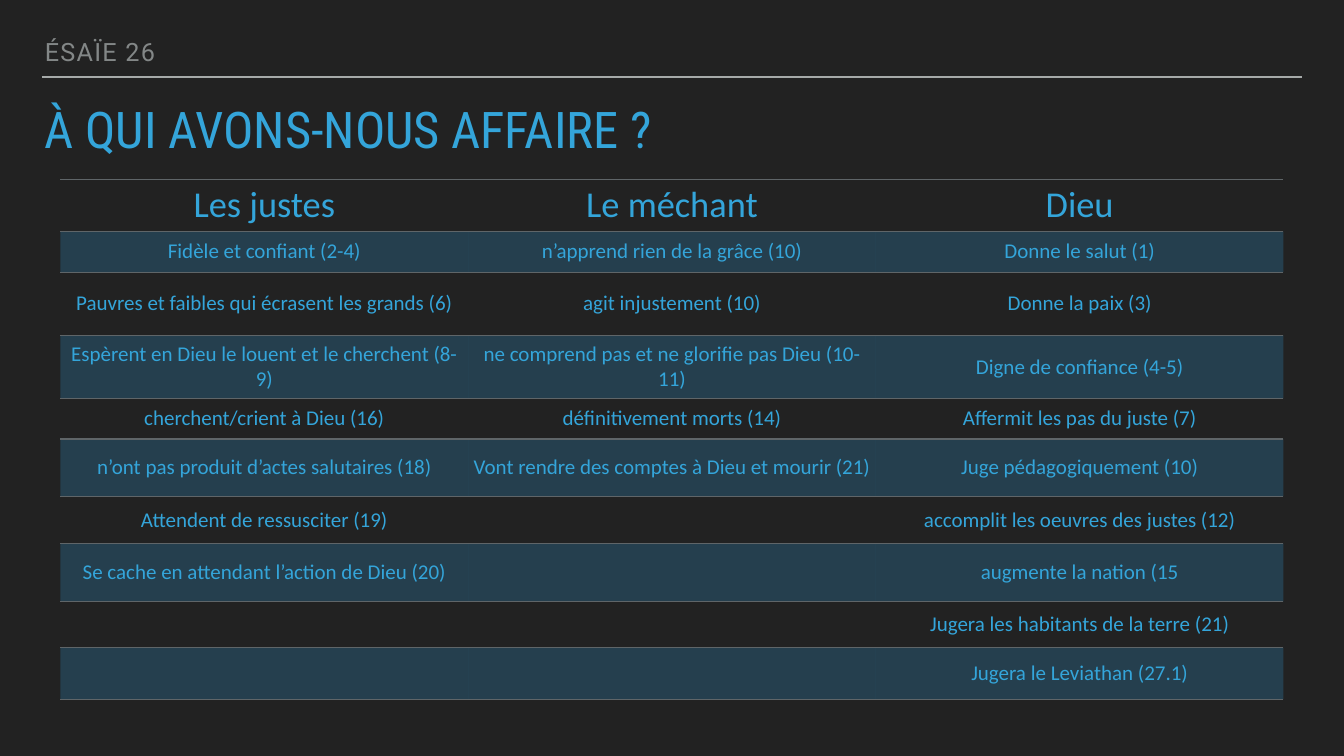
"""Build the slide comparing the righteous, the wicked and God in Isaiah 26."""
from lxml import etree
from pptx import Presentation
from pptx.dml.color import RGBColor
from pptx.enum.shapes import MSO_CONNECTOR
from pptx.enum.text import MSO_ANCHOR, PP_ALIGN
from pptx.oxml import parse_xml
from pptx.oxml.ns import nsdecls, qn
from pptx.util import Inches, Pt

STRAIGHT = MSO_CONNECTOR.STRAIGHT
TOP, MIDDLE, BOTTOM = MSO_ANCHOR.TOP, MSO_ANCHOR.MIDDLE, MSO_ANCHOR.BOTTOM
CENTER = PP_ALIGN.CENTER

BACKGROUND = RGBColor(0x22, 0x22, 0x22)
BLUE = RGBColor(0x34, 0xA5, 0xDA)
BAND = RGBColor(0x2E, 0x87, 0xBB)
GREY = RGBColor(0x83, 0x87, 0x87)
RULE = RGBColor(0xA6, 0xAA, 0xA9)
BORDER = RGBColor(0x5F, 0x65, 0x68)

CHAPTER = "ÉSAÏE 26"
TITLE = "À QUI AVONS-NOUS AFFAIRE ?"
ROWS = [
    (1.03, "Les justes", "Le méchant", "Dieu"),
    (0.81, "Fidèle et confiant (2-4)", "n’apprend rien de la grâce (10)",
     "Donne le salut (1)"),
    (1.25, "Pauvres et faibles qui écrasent les grands (6)",
     "agit injustement (10)", "Donne la paix (3)"),
    (1.26, "Espèrent en Dieu le louent et le cherchent (8-9)",
     "ne comprend pas et ne glorifie pas Dieu (10-11)",
     "Digne de confiance (4-5)"),
    (0.8, "cherchent/crient à Dieu (16)", "définitivement morts (14)",
     "Affermit les pas du juste (7)"),
    (1.14, "n’ont pas produit d’actes salutaires (18)",
     "Vont rendre des comptes à Dieu et mourir (21)",
     "Juge pédagogiquement (10)"),
    (0.93, "Attendent de ressusciter (19)", "",
     "accomplit les oeuvres des justes (12)"),
    (1.16, "Se cache en attendant l’action de Dieu (20)", "",
     "augmente la nation (15"),
    (0.91, "", "", "Jugera les habitants de la terre (21)"),
    (1.03, "", "", "Jugera le Leviathan (27.1)"),
]

MARGIN = 0.83
INSET = Inches(0.06)
COLUMN_WIDTH = 8.09
NO_STYLE = "{2D5ABB26-0587-4C30-8999-92F81FD0307C}"


def set_font(paragraph, name, size, color):
    font = paragraph.font
    font.name, font.size, font.color.rgb = name, Pt(size), color


def set_insets(box):
    box.margin_left = box.margin_right = INSET
    box.margin_top = box.margin_bottom = INSET


def add_heading(slide, text, top, width, height, anchor, font):
    box = slide.shapes.add_textbox(
        Inches(MARGIN), Inches(top), Inches(width), Inches(height))
    frame = box.text_frame
    frame.word_wrap = True
    frame.vertical_anchor = anchor
    set_insets(frame)
    paragraph = frame.paragraphs[0]
    paragraph.text = text
    paragraph.line_spacing = 0.8
    set_font(paragraph, *font)
    return paragraph


def add_rule(slide):
    y = Inches(1.53)
    rule = slide.shapes.add_connector(
        STRAIGHT, Inches(MARGIN), y, Inches(MARGIN + 25), y)
    rule.line.color.rgb = RULE
    rule.line.width = Pt(2)
    etree.SubElement(rule._element.spPr, qn("a:effectLst"))


def style_cell(cell, text, size, banded):
    cell.vertical_anchor = MIDDLE
    set_insets(cell)
    paragraph = cell.text_frame.paragraphs[0]
    paragraph.text = text
    paragraph.alignment = CENTER
    paragraph.space_before = Pt(34)
    set_font(paragraph, "Calibri", size, BLUE)
    properties = cell._tc.get_or_add_tcPr()
    if banded:
        cell.fill.solid()
        cell.fill.fore_color.rgb = BAND
        color = properties.find(".//" + qn("a:srgbClr"))
        etree.SubElement(color, qn("a:alpha"), val="29000")
    else:
        cell.fill.background()
    for position, side in enumerate(("lnT", "lnB")):
        properties.insert(position, parse_xml(
            f'<a:{side} {nsdecls("a")} w="{Pt(2)}"><a:solidFill>'
            f'<a:srgbClr val="{BORDER}"/></a:solidFill></a:{side}>'))


def add_comparison(slide):
    columns = len(ROWS[0]) - 1
    frame = slide.shapes.add_table(
        len(ROWS), columns, Inches(1.2), Inches(3.56),
        Inches(COLUMN_WIDTH * columns), Inches(sum(row[0] for row in ROWS)))
    table = frame.table
    table.first_row = table.horz_banding = False
    table._tbl.tblPr.find(qn("a:tableStyleId")).text = NO_STYLE
    for column in table.columns:
        column.width = Inches(COLUMN_WIDTH)
    for r, (height, *texts) in enumerate(ROWS):
        table.rows[r].height = Inches(height)
        for c, text in enumerate(texts):
            style_cell(table.cell(r, c), text, 30 if r else 52, r % 2 == 1)


def main():
    deck = Presentation()
    deck.slide_width, deck.slide_height = Inches(26.67), Inches(15)
    slide = deck.slides.add_slide(deck.slide_layouts[6])
    slide.background.fill.solid()
    slide.background.fill.fore_color.rgb = BACKGROUND
    add_rule(slide)
    title = add_heading(slide, TITLE, 2.12, 25, 1.11, TOP,
                        ("Roboto Condensed", 72.2, BLUE))
    title.space_before = Pt(32)
    chapter = add_heading(slide, CHAPTER, 0.69, 22.92, 0.69, BOTTOM,
                          ("Roboto", 36, GREY))
    chapter.runs[0]._r.get_or_add_rPr().set("spc", "180")
    add_comparison(slide)
    deck.save("out.pptx")


if __name__ == "__main__":
    main()
